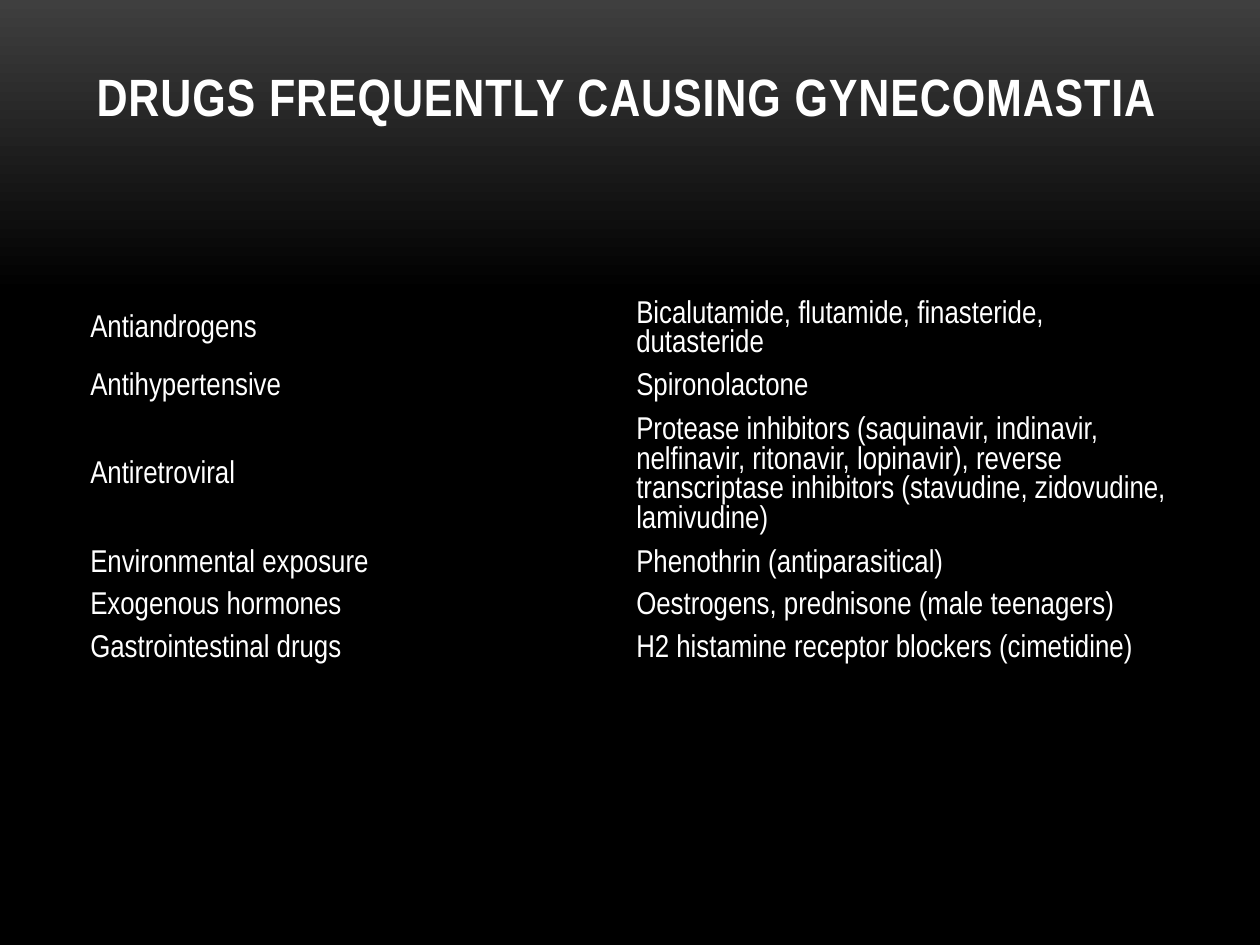
from dataclasses import dataclass

from pptx import Presentation
from pptx.dml.color import RGBColor
from pptx.enum.text import MSO_ANCHOR, MSO_AUTO_SIZE, PP_ALIGN
from pptx.util import Inches, Pt


@dataclass(frozen=True)
class Theme:
    """Colours, fonts and type sizes of the deck."""
    font: str = "Arial Narrow"
    text: RGBColor = RGBColor(0xFF, 0xFF, 0xFF)
    glow: RGBColor = RGBColor(0x3F, 0x3F, 0x3F)
    base: RGBColor = RGBColor(0x00, 0x00, 0x00)
    glow_end: float = 0.31
    title_size: float = 30
    body_size: float = 18
    title_tracking: str = "50"
    plain_table_style: str = "{2D5ABB26-0587-4C30-8999-92F81FD0307C}"


class SlideBuilder:
    """Holds the theme and the current slide and adds elements to it."""

    def __init__(self, presentation, theme):
        """Add a title-only slide."""
        self.theme = theme
        self.width = presentation.slide_width
        self.height = presentation.slide_height
        self.slide = presentation.slides.add_slide(presentation.slide_layouts[5])

    def box(self, left, top, width, height):
        """Turn shares of the slide's size into lengths."""
        return (int(left * self.width), int(top * self.height),
                int(width * self.width), int(height * self.height))

    def style(self, paragraph, size, bold=False):
        """Format the runs of a paragraph."""
        paragraph.alignment = PP_ALIGN.LEFT
        for run in paragraph.runs:
            run.font.name = self.theme.font
            run.font.size = Pt(size)
            run.font.bold = bold
            run.font.color.rgb = self.theme.text

    def background(self):
        """Fade the background from the glow at the top to the base colour."""
        fill = self.slide.background.fill
        fill.gradient()
        fill.gradient_angle = 270
        stops = ((self.theme.glow, 0), (self.theme.base, self.theme.glow_end))
        for stop, (color, position) in zip(fill.gradient_stops, stops):
            stop.color.rgb = color
            stop.position = position

    def title(self, text, box, margin_bottom):
        """Place and format the title placeholder."""
        shape = self.slide.shapes.title
        shape.left, shape.top, shape.width, shape.height = self.box(*box)
        text_frame = shape.text_frame
        text_frame.text = text
        text_frame.word_wrap = True
        text_frame.auto_size = MSO_AUTO_SIZE.NONE
        text_frame.vertical_anchor = MSO_ANCHOR.BOTTOM
        text_frame.margin_bottom = Inches(margin_bottom)
        paragraph = text_frame.paragraphs[0]
        self.style(paragraph, self.theme.title_size, bold=True)
        for run in paragraph.runs:
            run.font._element.set("spc", self.theme.title_tracking)

    def table(self, rows, line_counts, box, margin, line_height):
        """Add an unruled table below an empty merged heading row."""
        table = self.slide.shapes.add_table(
            len(rows) + 1, len(rows[0]), *self.box(*box)).table
        table.first_row = table.horz_banding = False
        table._tbl.tblPr[0].text = self.theme.plain_table_style
        for row, lines in zip(table.rows, (1, *line_counts)):
            row.height = Inches(2 * margin + lines * line_height)
        table.cell(0, 0).merge(table.cell(0, len(rows[0]) - 1))
        for cell in table.iter_cells():
            cell.fill.background()
            cell.margin_top = cell.margin_bottom = 0
        for row_index, values in enumerate(rows, start=1):
            for column_index, value in enumerate(values):
                cell = table.cell(row_index, column_index)
                cell.text_frame.text = value
                cell.vertical_anchor = MSO_ANCHOR.MIDDLE
                cell.margin_left = cell.margin_right = Inches(margin)
                cell.margin_top = cell.margin_bottom = Inches(margin)
                self.style(cell.text_frame.paragraphs[0], self.theme.body_size)


DRUGS = (
    ("Antiandrogens", "Bicalutamide, flutamide, finasteride, dutasteride"),
    ("Antihypertensive", "Spironolactone"),
    ("Antiretroviral",
     "Protease inhibitors (saquinavir, indinavir, nelfinavir, ritonavir, "
     "lopinavir), reverse transcriptase inhibitors (stavudine, zidovudine, "
     "lamivudine)"),
    ("Environmental exposure", "Phenothrin (antiparasitical)"),
    ("Exogenous hormones", "Oestrogens, prednisone (male teenagers)"),
    ("Gastrointestinal drugs", "H2 histamine receptor blockers (cimetidine)"),
)


def main():
    """Build and save the slide."""
    presentation = Presentation()
    presentation.slide_width = Inches(10)
    presentation.slide_height = Inches(7.5)
    builder = SlideBuilder(presentation, Theme())
    builder.background()
    left, width = 1 / 15, 13 / 15
    builder.title("DRUGS FREQUENTLY CAUSING GYNECOMASTIA",
                  (left, 0.04, width, 1 / 6), margin_bottom=0.54)
    builder.table(DRUGS, (2, 1, 4, 1, 1, 1), (left, 0.265, width, 0.44),
                  margin=0.05, line_height=0.24)
    presentation.save("out.pptx")


if __name__ == "__main__":
    main()
